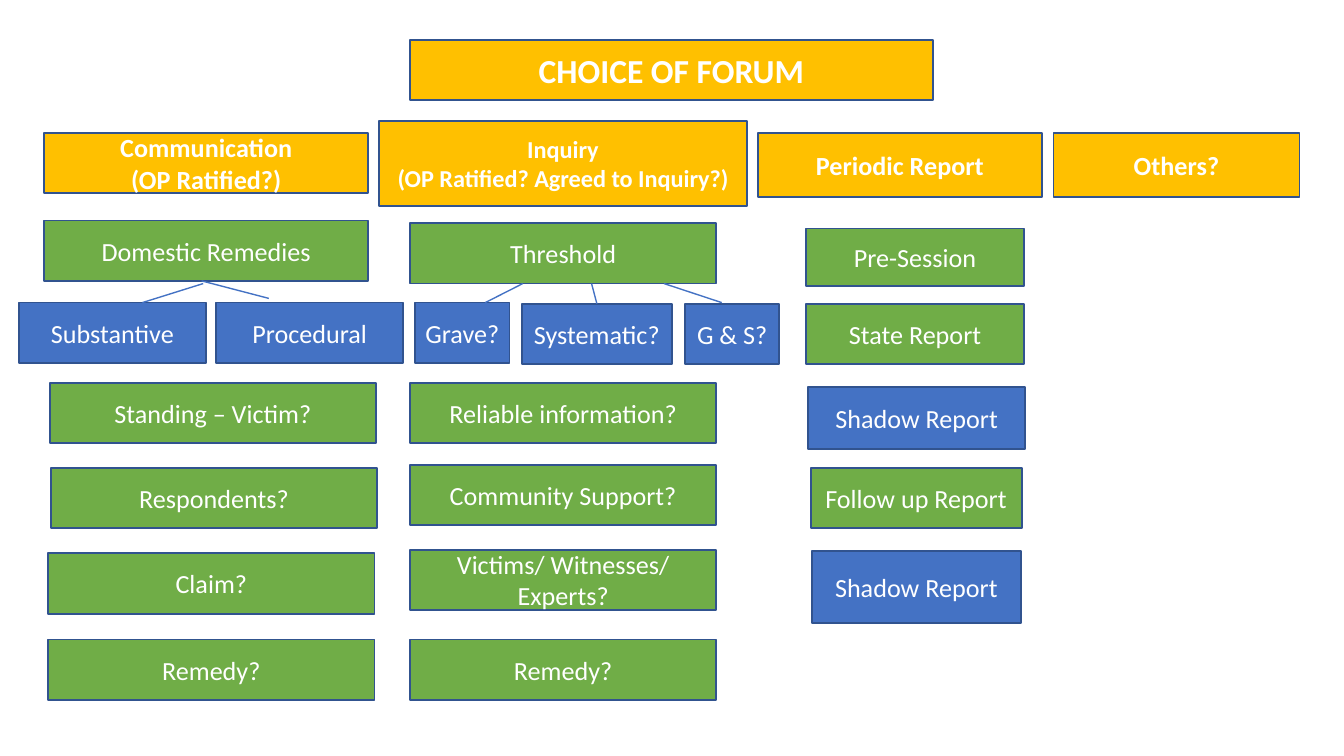
"""Build the choice-of-forum decision chart slide."""
from lxml import etree
from pptx import Presentation
from pptx.dml.color import RGBColor
from pptx.enum.shapes import MSO_CONNECTOR, MSO_SHAPE
from pptx.enum.text import MSO_ANCHOR, PP_ALIGN
from pptx.oxml.ns import qn
from pptx.util import Cm, Pt

RECTANGLE = MSO_SHAPE.RECTANGLE
STRAIGHT = MSO_CONNECTOR.STRAIGHT
MIDDLE = MSO_ANCHOR.MIDDLE
CENTER = PP_ALIGN.CENTER
TOP_SIDE = 0

COLORS = {
    "heading": "FFC000",
    "step": "70AD47",
    "option": "4472C4",
    "outline": "31538F",
    "branch": "4472C4",
    "text": "FFFFFF",
}
FONT = "Calibri"
BODY_SIZE = 14
BOX_HEIGHT = 1.14

# Each heading: text, left, top, width, height, font size
HEADINGS = [
    ("CHOICE OF FORUM", 7.75, 0.76, 9.88, BOX_HEIGHT, 18),
    ("Communication\n(OP Ratified?)", 0.84, 2.51, 6.12, BOX_HEIGHT, BODY_SIZE),
    ("Inquiry\n(OP Ratified? Agreed to Inquiry?)", 7.16, 2.29, 6.96, 1.6, 13),
    ("Periodic Report", 14.33, 2.51, 5.36, 1.22, BODY_SIZE),
    ("Others?", 19.91, 2.51, 4.65, 1.22, BODY_SIZE),
]
COMMUNICATION_STEPS = [
    ("Domestic Remedies", 0.84, 4.17, 6.12),
    ("Standing – Victim?", 0.94, 7.24, 6.17),
    ("Respondents?", 0.97, 8.84, 6.15),
    ("Claim?", 0.91, 10.46, 6.17),
    ("Remedy?", 0.91, 12.09, 6.17),
]
INQUIRY_LEFT, INQUIRY_WIDTH = 7.75, 5.79
INQUIRY_STEPS = [
    ("Threshold", 4.22),
    ("Reliable information?", 7.24),
    ("Community Support?", 8.79),
    ("Victims/ Witnesses/ Experts?", 10.39),
    ("Remedy?", 12.09),
]
OPTIONS = [
    ("Substantive", 0.36, 5.72, 3.53),
    ("Procedural", 4.09, 5.72, 3.53),
    ("Grave?", 7.85, 5.72, 1.78),
    ("Systematic?", 9.86, 5.74, 2.84),
    ("G & S?", 12.95, 5.74, 1.78),
]
REPORTS = [
    ("Pre-Session", "step", 15.24, 4.32, 4.11, 1.09),
    ("State Report", "step", 15.24, 5.74, 4.11, BOX_HEIGHT),
    ("Shadow Report", "option", 15.27, 7.32, 4.11, 1.17),
    ("Follow up Report", "step", 15.32, 8.84, 3.99, BOX_HEIGHT),
    ("Shadow Report", "option", 15.34, 10.41, 3.96, 1.37),
]
BRANCHES = [
    (3.84, 5.36, 2.69, 5.72),
    (3.81, 5.31, 5.08, 5.64),
    (9.88, 5.36, 9.17, 5.72),
    (12.55, 5.36, 13.64, 5.72),
]
SYSTEMATIC_BRANCH = (11.18, 5.36, 11.28, 5.74)


def color(name):
    return RGBColor.from_string(COLORS[name])


def add_box(page, text, fill, left, top, width, height=BOX_HEIGHT, size=BODY_SIZE):
    box = page.shapes.add_shape(RECTANGLE, Cm(left), Cm(top), Cm(width), Cm(height))
    box.shadow.inherit = False
    box.fill.solid()
    box.fill.fore_color.rgb = color(fill)
    box.line.color.rgb = color("outline")
    box.line.width = Pt(1)
    frame = box.text_frame
    frame.word_wrap = True
    frame.vertical_anchor = MIDDLE
    frame.margin_left = frame.margin_right = Cm(0.19)
    frame.margin_top = frame.margin_bottom = Cm(0.1)
    frame.text = text
    for para in frame.paragraphs:
        para.alignment = CENTER
        para.font.name = FONT
        para.font.size = Pt(size)
        para.font.bold = fill == "heading"
        para.font.color.rgb = color("text")
    return box


def add_branch(page, ends):
    branch = page.shapes.add_connector(STRAIGHT, *(Cm(value) for value in ends))
    branch.line.color.rgb = color("branch")
    branch.line.width = Pt(0.75)
    etree.SubElement(branch._element.spPr, qn("a:effectLst"))
    return branch


def main():
    deck = Presentation()
    deck.slide_width, deck.slide_height = Cm(25.4), Cm(14.29)
    page = deck.slides.add_slide(deck.slide_layouts[6])

    for text, *place in HEADINGS:
        add_box(page, text, "heading", *place)
    for text, *place in COMMUNICATION_STEPS:
        add_box(page, text, "step", *place)
    for text, top in INQUIRY_STEPS:
        add_box(page, text, "step", INQUIRY_LEFT, top, INQUIRY_WIDTH)
    options = {text: add_box(page, text, "option", *place) for text, *place in OPTIONS}
    for report in REPORTS:
        add_box(page, *report)

    for ends in BRANCHES:
        add_branch(page, ends)
    add_branch(page, SYSTEMATIC_BRANCH).end_connect(options["Systematic?"], TOP_SIDE)

    deck.save("out.pptx")


if __name__ == "__main__":
    main()
